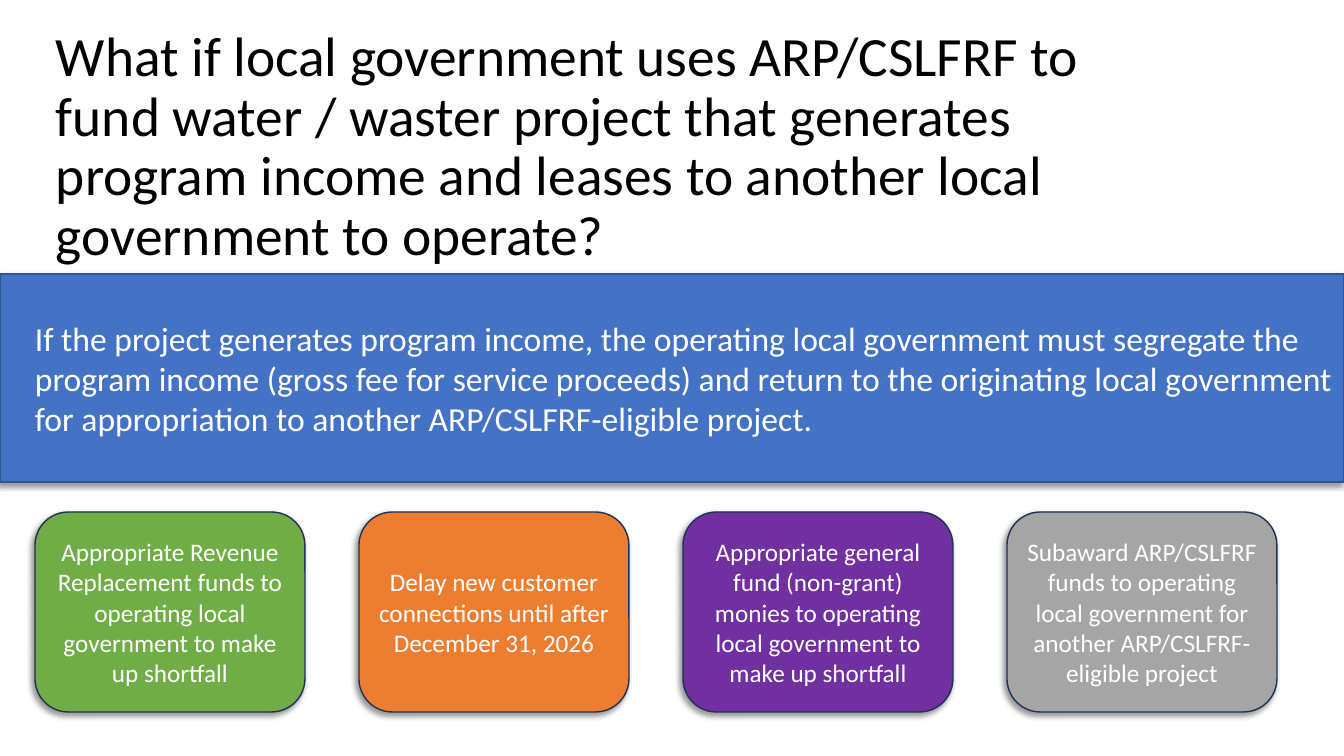
from lxml import etree
from pptx import Presentation
from pptx.dml.color import RGBColor
from pptx.enum.shapes import MSO_SHAPE
from pptx.enum.text import MSO_ANCHOR, PP_ALIGN
from pptx.oxml.ns import qn
from pptx.util import Emu, Pt

RECTANGLE = MSO_SHAPE.RECTANGLE
ROUNDED = MSO_SHAPE.ROUNDED_RECTANGLE
MIDDLE = MSO_ANCHOR.MIDDLE
LEFT, CENTER = PP_ALIGN.LEFT, PP_ALIGN.CENTER

EMU_PER_PX = 914400 / 100.8
FONT = "Calibri"
COLORS = {
    "black": "000000",
    "white": "FFFFFF",
    "blue": "4472C4",
    "banner line": "325491",
    "card line": "1E3256",
    "green": "70AD47",
    "orange": "ED7D31",
    "purple": "7030A0",
    "gray": "A5A5A5",
}

TITLE = ("What if local government uses ARP/CSLFRF to fund water / waster project "
         "that generates program income and leases to another local government to operate?")
ANSWER = ("If the project generates program income, the operating local government must "
          "segregate the program income (gross fee for service proceeds) and return to the "
          "originating local government for appropriation to another ARP/CSLFRF-eligible project.")
OPTIONS = [
    ("green", "Appropriate Revenue Replacement funds to operating local government "
              "to make up shortfall"),
    ("orange", "Delay new customer connections until after December 31, 2026"),
    ("purple", "Appropriate general fund (non-grant) monies to operating local government "
               "to make up shortfall"),
    ("gray", "Subaward ARP/CSLFRF funds to operating local government for another "
             "ARP/CSLFRF-eligible project"),
]


def px(*lengths):
    return [Emu(round(length * EMU_PER_PX)) for length in lengths]


def write(shape, text, size, color, align):
    frame = shape.text_frame
    frame.word_wrap = True
    frame.vertical_anchor = MIDDLE
    para = frame.paragraphs[0]
    para.text = text
    para.alignment = align
    para.font.name = FONT
    para.font.size = Pt(size)
    para.font.color.rgb = RGBColor.from_string(COLORS[color])
    return para


deck = Presentation()
deck.slide_width, deck.slide_height = px(1344, 756)
page = deck.slides.add_slide(deck.slide_layouts[6])

# Title
title = page.shapes.add_textbox(*px(46, 75, 1159, 146))
title_para = write(title, TITLE, 39.6, "black", LEFT)
title_para.line_spacing = 0.9

# Answer banner and row of option cards
CARD_LEFT, CARD_STEP = 35, 324
panels = [(RECTANGLE, (0, 274, 1344, 208), "blue", "banner line", ANSWER, 24, LEFT)]
for index, (fill, text) in enumerate(OPTIONS):
    area = (CARD_LEFT + index * CARD_STEP, 512, 270, 200)
    panels.append((ROUNDED, area, fill, "card line", text, 18, CENTER))

for kind, area, fill, line, text, size, align in panels:
    panel = page.shapes.add_shape(kind, *px(*area))
    panel.fill.solid()
    panel.fill.fore_color.rgb = RGBColor.from_string(COLORS[fill])
    panel.line.color.rgb = RGBColor.from_string(COLORS[line])
    panel.line.width = Pt(1)
    para = write(panel, text, size, "white", align)
    if kind == RECTANGLE:
        para._p.get_or_add_pPr().set("marL", str(px(25)[0]))

    # Soft shadow towards the lower left
    panel.shadow.inherit = False
    effects = panel._element.spPr.find(qn("a:effectLst"))
    shadow = etree.SubElement(effects, qn("a:outerShdw"), blurRad=str(Pt(4)),
                              dist=str(Pt(3)), dir=str(135 * 60000),
                              algn="tr", rotWithShape="0")
    tint = etree.SubElement(shadow, qn("a:srgbClr"), val=COLORS["black"])
    etree.SubElement(tint, qn("a:alpha"), val="40000")

deck.save("out.pptx")
